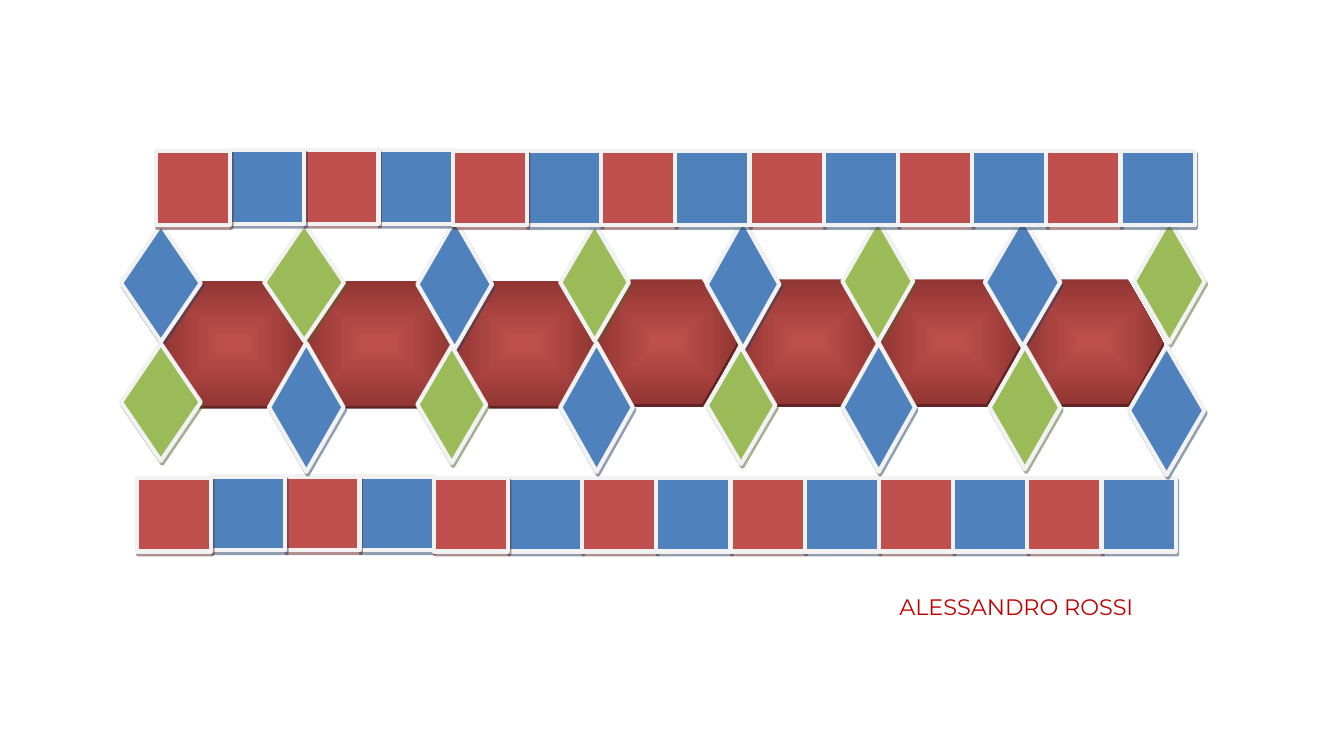
from lxml import etree
from pptx import Presentation, util as u
from pptx.dml.color import RGBColor
from pptx.enum import shapes, text
from pptx.oxml.ns import qn

RED = RGBColor(0xC0, 0x50, 0x4D)
DARK_RED = RGBColor(0x92, 0x36, 0x33)
BLUE = RGBColor(0x4F, 0x81, 0xBD)
GREEN = RGBColor(0x9B, 0xBB, 0x59)
EDGE = RGBColor(0xF2, 0xF2, 0xF2)
NAME_RED = RGBColor(0xC0, 0x00, 0x00)
SHADOWS = {RED: "622423", BLUE: "243F60", GREEN: "4E6128"}

# Tile row: stacking order, and the tiles set slightly higher
TILE_ORDER = [3, 2, 1, 5, 4, *range(6, 14), 0]
RAISED_TILES = (1, 2, 3)

HEXAGON_WIDTHS = [3.58, 3.73, 3.6, 3.58, 3.58, 3.58, 3.58]

# Diamonds: left, top, width, height within the band, in cm
UPPER_DIAMONDS = [
    (0, 0.17, 2.01, 2.95), (3.61, 0.15, 2.01, 2.95),
    (7.47, 0.05, 1.88, 3.25), (11.07, 0.15, 1.73, 2.95),
    (14.76, 0.05, 1.83, 3.25), (18.18, 0.05, 1.78, 3.1),
    (21.77, 0, 1.9, 3.25), (25.53, 0.05, 1.78, 3.1),
]
LOWER_DIAMONDS = [
    (0, 3.17, 2.01, 2.95), (3.73, 3.15, 1.88, 3.25),
    (7.47, 3.23, 1.73, 2.95), (11.07, 3.15, 1.83, 3.25),
    (14.76, 3.25, 1.73, 2.95), (18.18, 3.15, 1.83, 3.25),
    (21.89, 3.23, 1.78, 3.1), (25.4, 3.23, 1.9, 3.25),
]


def add_shadow(sp, color, alpha):
    sp.shadow.inherit = False
    effects = sp._element.spPr.find(qn("a:effectLst"))
    shadow = etree.SubElement(effects, qn("a:outerShdw"), dist="28400",
                              dir="3800000", algn="ctr", rotWithShape="0")
    clr = etree.SubElement(shadow, qn("a:srgbClr"), val=color)
    etree.SubElement(clr, qn("a:alpha"), val=str(alpha * 1000))


def add_piece(s, kind, left, top, width, height, color):
    """Flat shape with a pale edge and a soft-coloured shadow."""
    sp = s.shapes.add_shape(kind, u.Cm(left), u.Cm(top), u.Cm(width), u.Cm(height))
    sp.fill.solid()
    sp.fill.fore_color.rgb = color
    sp.line.color.rgb = EDGE
    sp.line.width = u.Pt(3)
    add_shadow(sp, SHADOWS[color], 50)


def add_hexagon(s, left, top, width, height):
    sp = s.shapes.add_shape(shapes.MSO_SHAPE.HEXAGON, u.Cm(left), u.Cm(top),
                            u.Cm(width), u.Cm(height))
    sp.adjustments[0] = 0.284
    sp.line.fill.background()
    # Gradient running from the centre outwards
    sp.fill.gradient()
    for stop, color in zip(sp.fill.gradient_stops, (RED, DARK_RED)):
        stop.color.rgb = color
    grad = sp._element.spPr.find(qn("a:gradFill"))
    grad.remove(grad.find(qn("a:lin")))
    centre = etree.SubElement(grad, qn("a:path"), path="shape")
    etree.SubElement(centre, qn("a:fillToRect"), l="50000", t="50000",
                     r="50000", b="50000")
    add_shadow(sp, SHADOWS[RED], 100)


def add_tile_row(s, left, top, width, height):
    pitch = width / len(TILE_ORDER)
    for i in TILE_ORDER:
        y = top - 0.03 if i in RAISED_TILES else top
        add_piece(s, shapes.MSO_SHAPE.RECTANGLE, left + i * pitch, y, pitch,
                  height, (RED, BLUE)[i % 2])


def add_hexagon_row(s, left, top, height):
    for i, width in enumerate(HEXAGON_WIDTHS):
        add_hexagon(s, left, top if i < 3 else top - 0.04, width, height)
        left += width


def add_diamonds(s, left, top):
    for row, colors in ((UPPER_DIAMONDS, (BLUE, GREEN)),
                        (LOWER_DIAMONDS, (GREEN, BLUE))):
        for i, (x, y, width, height) in enumerate(row):
            add_piece(s, shapes.MSO_SHAPE.DIAMOND, left + x, top + y, width,
                      height, colors[i % 2])


def add_text(s, content, left, top, width, height, font, size, color):
    tf = s.shapes.add_textbox(u.Cm(left), u.Cm(top), u.Cm(width),
                              u.Cm(height)).text_frame
    tf.word_wrap = False
    p = tf.paragraphs[0]
    p.alignment = text.PP_ALIGN.CENTER
    r = p.add_run()
    r.text = content
    r.font.name = font
    r.font.size = u.Pt(size)
    r.font.color.rgb = color


def main():
    prs = Presentation()
    prs.slide_width, prs.slide_height = u.Cm(33.87), u.Cm(19.05)
    s = prs.slides.add_slide(prs.slide_layouts[6])

    # Lower tiles, middle band, upper tiles
    add_tile_row(s, 3.45, 12.04, 26.18, 1.86)
    add_hexagon_row(s, 4.09, 7.08, 3.15)
    add_diamonds(s, 3.05, 5.49)
    add_tile_row(s, 3.93, 3.81, 26.18, 1.86)

    # Name
    add_text(s, "ALESSANDRO ROSSI", 21.92, 14.81, 7.39, 0.58,
             font="Montserrat", size=16, color=NAME_RED)
    prs.save("out.pptx")


if __name__ == "__main__":
    main()
